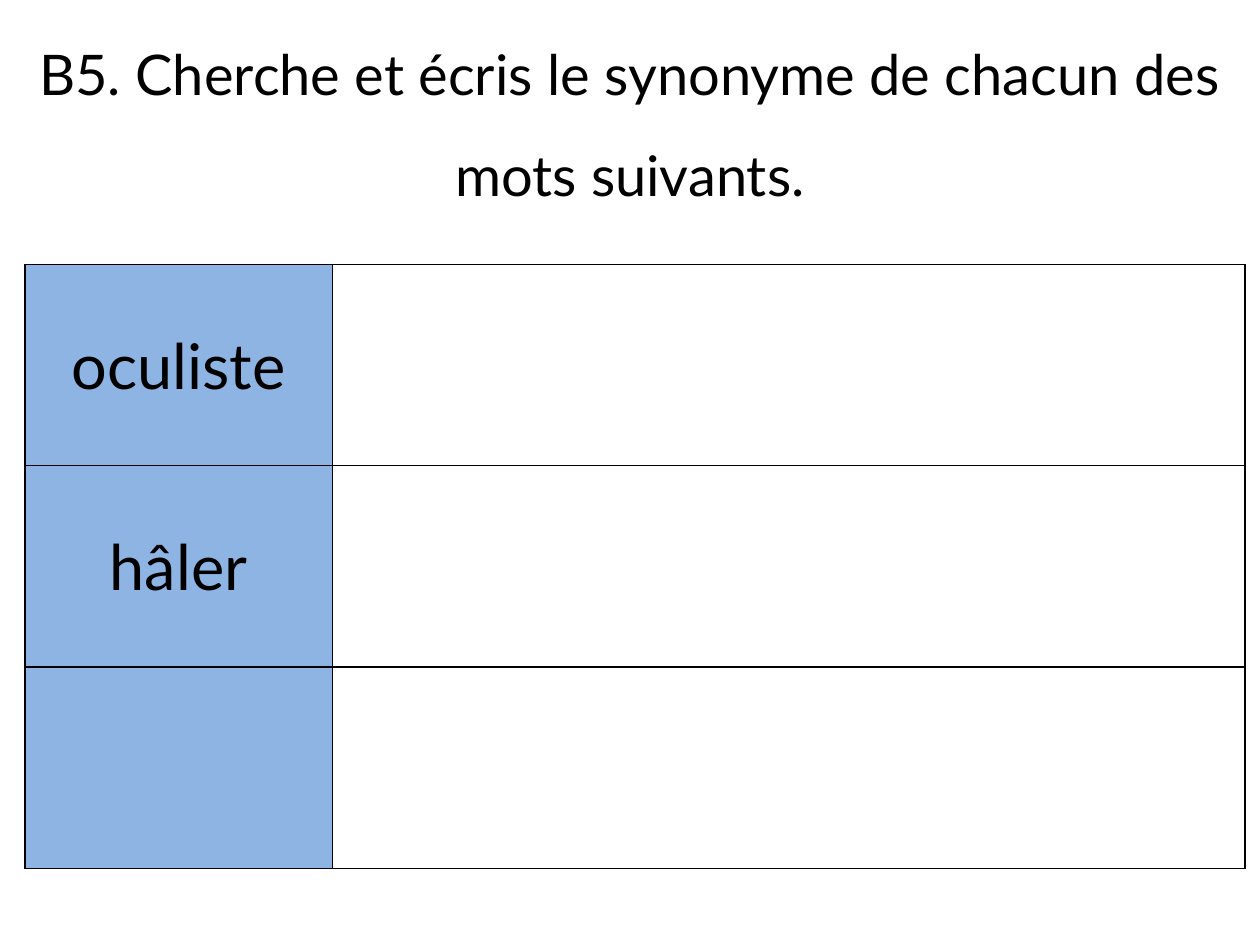
from dataclasses import dataclass

from lxml.etree import SubElement
from pptx import Presentation
from pptx.dml.color import RGBColor
from pptx.enum.text import MSO_ANCHOR, PP_ALIGN
from pptx.oxml.ns import qn
from pptx.slide import Slide
from pptx.table import _Cell
from pptx.text.text import _Paragraph
from pptx.util import Cm, Pt


@dataclass(frozen=True)
class Theme:
    font: str = "Lato"
    ink: str = "000000"
    word_fill: str = "8EB4E3"
    answer_fill: str = "FFFFFF"
    title_size: int = 32
    word_size: int = 36
    border_width: int = 1


@dataclass(frozen=True)
class WordRow:
    word: str
    synonym: str = ""


THEME = Theme()
TITLE = "B5. Cherche et écris le synonyme de chacun des mots suivants."
WORD_ROWS = [WordRow("oculiste"), WordRow("hâler"), WordRow("")]
COLUMN_WIDTHS = [Cm(6.2), Cm(18.4)]
ROW_HEIGHT = Cm(4.06)


def write_text(paragraph: _Paragraph, text: str, size: int) -> None:
    paragraph.alignment = PP_ALIGN.CENTER
    run = paragraph.add_run()
    run.text = text
    font_format = {"name": THEME.font, "size": Pt(size)}
    for name, value in font_format.items():
        setattr(run.font, name, value)
    run.font.color.rgb = RGBColor.from_string(THEME.ink)


def add_title(slide: Slide, width: int) -> None:
    text_frame = slide.shapes.add_textbox(0, 0, width, Cm(4.37)).text_frame
    text_frame.word_wrap = True
    paragraph = text_frame.paragraphs[0]
    paragraph.line_spacing = 1.5
    write_text(paragraph, TITLE, THEME.title_size)


def add_borders(cell: _Cell) -> None:
    """Line all four sides; borders must precede the fill in the cell XML."""
    properties = cell._tc.get_or_add_tcPr()
    for side in ("lnL", "lnR", "lnT", "lnB"):
        line = SubElement(properties, qn(f"a:{side}"), w=str(Pt(THEME.border_width)))
        fill = SubElement(line, qn("a:solidFill"))
        SubElement(fill, qn("a:srgbClr"), val=THEME.ink)


def fill_cell(cell: _Cell, text: str, color: str) -> None:
    add_borders(cell)
    cell.fill.solid()
    cell.fill.fore_color.rgb = RGBColor.from_string(color)
    cell.vertical_anchor = MSO_ANCHOR.MIDDLE
    if text:
        write_text(cell.text_frame.paragraphs[0], text, THEME.word_size)


def add_word_table(slide: Slide) -> None:
    table = slide.shapes.add_table(
        len(WORD_ROWS), len(COLUMN_WIDTHS), Cm(0.5), Cm(5.33),
        sum(COLUMN_WIDTHS), ROW_HEIGHT * len(WORD_ROWS),
    ).table
    table_format = {"first_row": False, "horz_banding": False}
    for name, value in table_format.items():
        setattr(table, name, value)
    for column, width in zip(table.columns, COLUMN_WIDTHS):
        column.width = width
    for row, word_row in zip(table.rows, WORD_ROWS):
        row.height = ROW_HEIGHT
        word_cell, answer_cell = row.cells
        fill_cell(word_cell, word_row.word, THEME.word_fill)
        fill_cell(answer_cell, word_row.synonym, THEME.answer_fill)


def main() -> None:
    presentation = Presentation()
    presentation.slide_width = Cm(25.4)
    presentation.slide_height = Cm(19.05)
    slide = presentation.slides.add_slide(presentation.slide_layouts[6])
    add_title(slide, presentation.slide_width)
    add_word_table(slide)
    presentation.save("out.pptx")


if __name__ == "__main__":
    main()
